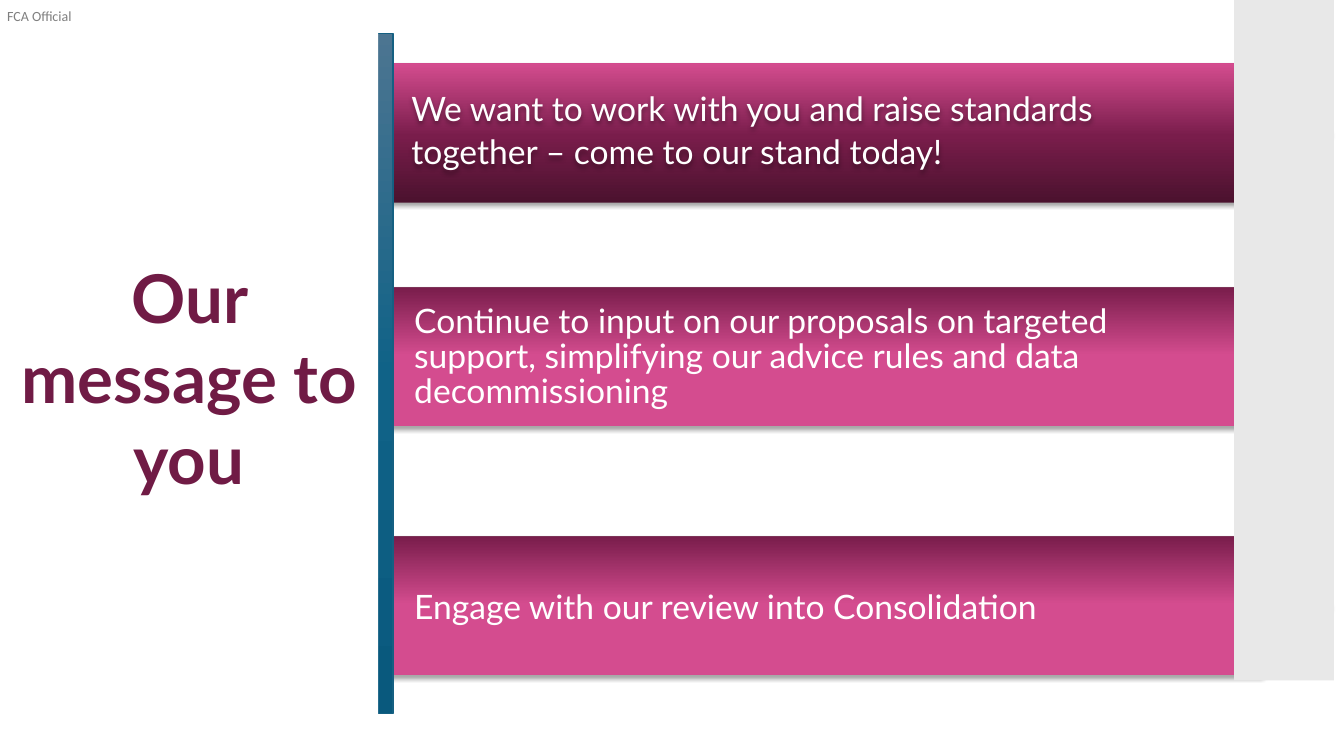
"""Builds the closing message slide with three gradient banners."""
from copy import deepcopy

from lxml import etree
from pptx import Presentation
from pptx.dml.color import RGBColor
from pptx.enum.shapes import MSO_SHAPE
from pptx.enum.text import MSO_ANCHOR, MSO_AUTO_SIZE, PP_ALIGN
from pptx.oxml import parse_xml
from pptx.oxml.ns import nsdecls, qn
from pptx.util import Inches, Pt

RECTANGLE, PENTAGON = MSO_SHAPE.RECTANGLE, MSO_SHAPE.PENTAGON
TOP, MIDDLE = MSO_ANCHOR.TOP, MSO_ANCHOR.MIDDLE
CENTER, LEFT = PP_ALIGN.CENTER, PP_ALIGN.LEFT
NO_FIT = MSO_AUTO_SIZE.NONE

WHITE = RGBColor(0xFF, 0xFF, 0xFF)
LIGHT_GREY = RGBColor(0xE8, 0xE8, 0xE8)
MID_GREY = RGBColor(0x7F, 0x7F, 0x7F)
PLUM = RGBColor(0x70, 0x1B, 0x45)
DARK_PLUM = RGBColor(0x4B, 0x12, 0x2E)
BERRY = RGBColor(0x79, 0x1D, 0x4B)
PINK = RGBColor(0xD4, 0x4C, 0x8F)
STEEL = RGBColor(0x4C, 0x75, 0x91)
TEAL = RGBColor(0x10, 0x62, 0x87)
DEEP_TEAL = RGBColor(0x09, 0x59, 0x7D)
TEAL_EDGE = RGBColor(0x15, 0x60, 0x82)

SHADOW = (
    f'<a:outerShdw {nsdecls("a")} blurRad="39370" dist="22860" dir="5400000" rotWithShape="0">'
    '<a:srgbClr val="000000"><a:alpha val="35000"/></a:srgbClr></a:outerShdw>'
)


def add_panel(kind, box, stops, angle=270):
    panel = slide.shapes.add_shape(kind, *map(Inches, box))
    panel.shadow.inherit = False
    panel.line.fill.background()
    if len(stops) == 1:
        panel.fill.solid()
        panel.fill.fore_color.rgb = stops[0][1]
        return panel
    panel.fill.gradient()
    panel.fill.gradient_angle = angle
    stop_list = panel.element.spPr.find(".//" + qn("a:gsLst"))
    stop_list.append(deepcopy(stop_list[0]))
    for stop, (position, color) in zip(panel.fill.gradient_stops, stops):
        stop.position = position
        stop.color.rgb = color
    return panel


def write_text(box, lines, font, paragraph_format, frame_format):
    frame = box.text_frame
    for name, value in frame_format.items():
        setattr(frame, name, value)
    frame.text = "\n".join(lines)
    for paragraph in frame.paragraphs:
        for name, value in paragraph_format.items():
            setattr(paragraph, name, value)
        for name, value in font.items():
            setattr(paragraph.font, name, value)
        paragraph.font.color.rgb = font_color


presentation = Presentation()
presentation.slide_width, presentation.slide_height = Inches(13.33), Inches(7.5)
slide = presentation.slides.add_slide(presentation.slide_layouts[5])

rising = [(0, DARK_PLUM), (0.48, BERRY), (1, PINK)]
falling = [(0, DARK_PLUM), (0, BERRY), (0.49, PINK)]
banner_font = {"name": "Lato", "size": Pt(24)}
font_color = WHITE
wide_inset = dict.fromkeys(
    ("margin_left", "margin_top", "margin_right", "margin_bottom"), Inches(0.12))
banners = [
    ((2.44, 0.63), rising, 90, (3.96, 0.98, 7.83, 0.58),
     ["We want to work with you and raise standards together – come to our stand today!"],
     {"line_spacing": 1.07, "space_after": Pt(10.7)},
     {"vertical_anchor": MIDDLE, **wide_inset}),
    ((2.33, 2.85), falling, 270, (4.01, 3.1, 8.43, 1.03),
     ["Continue to input on our proposals on targeted",
      "support, simplifying our advice rules and data",
      "decommissioning"],
     {"line_spacing": 0.5, "space_after": Pt(10.7)}, {"vertical_anchor": TOP}),
    ((2.44, 5.32), falling, 270, (4.01, 5.76, 8.17, 0.5),
     ["Engage with our review into Consolidation"], {}, {"vertical_anchor": TOP}),
]
for corner, stops, angle, text_area, lines, spacing, frame_format in banners:
    banner = add_panel(PENTAGON, (*corner, 10.76, 1.38), stops, angle)
    banner.element.spPr.find(qn("a:effectLst")).append(parse_xml(SHADOW))
    message = slide.shapes.add_textbox(*map(Inches, text_area))
    write_text(message, lines, banner_font, {"alignment": LEFT, **spacing},
               {"word_wrap": True, **frame_format})
    if stops is rising:
        effects = etree.SubElement(message.element.spPr, qn("a:effectLst"))
        effects.append(parse_xml(SHADOW))

spine = add_panel(RECTANGLE, (3.24, 0.33, 0.66, 6.75),
                  [(0, STEEL), (0.5, TEAL), (1, DEEP_TEAL)])
spine.line.color.rgb = TEAL_EDGE
spine.line.width = Pt(1)
add_panel(RECTANGLE, (0, 0.24, 3.75, 6.93), [(0, WHITE)])
add_panel(RECTANGLE, (12.24, 0, 0.99, 6.75), [(0, LIGHT_GREY)])

heading = slide.shapes.title
heading.left, heading.top = Inches(0.02), Inches(2.49)
heading.width, heading.height = Inches(3.71), Inches(2.52)
heading.element.getparent().append(heading.element)
font_color = PLUM
write_text(heading, ["Our message to you"], {"name": "Lato", "size": Pt(48), "bold": True},
           {"alignment": CENTER},
           {"word_wrap": True, "auto_size": NO_FIT, "vertical_anchor": TOP})

classification = slide.shapes.add_textbox(Inches(0.07), Inches(0.07), Inches(0.68), Inches(0.17))
font_color = MID_GREY
write_text(classification, ["FCA Official"], {"name": "Calibri", "size": Pt(10)},
           {"alignment": LEFT},
           {"word_wrap": False, **dict.fromkeys(wide_inset, 0)})

presentation.save("out.pptx")
